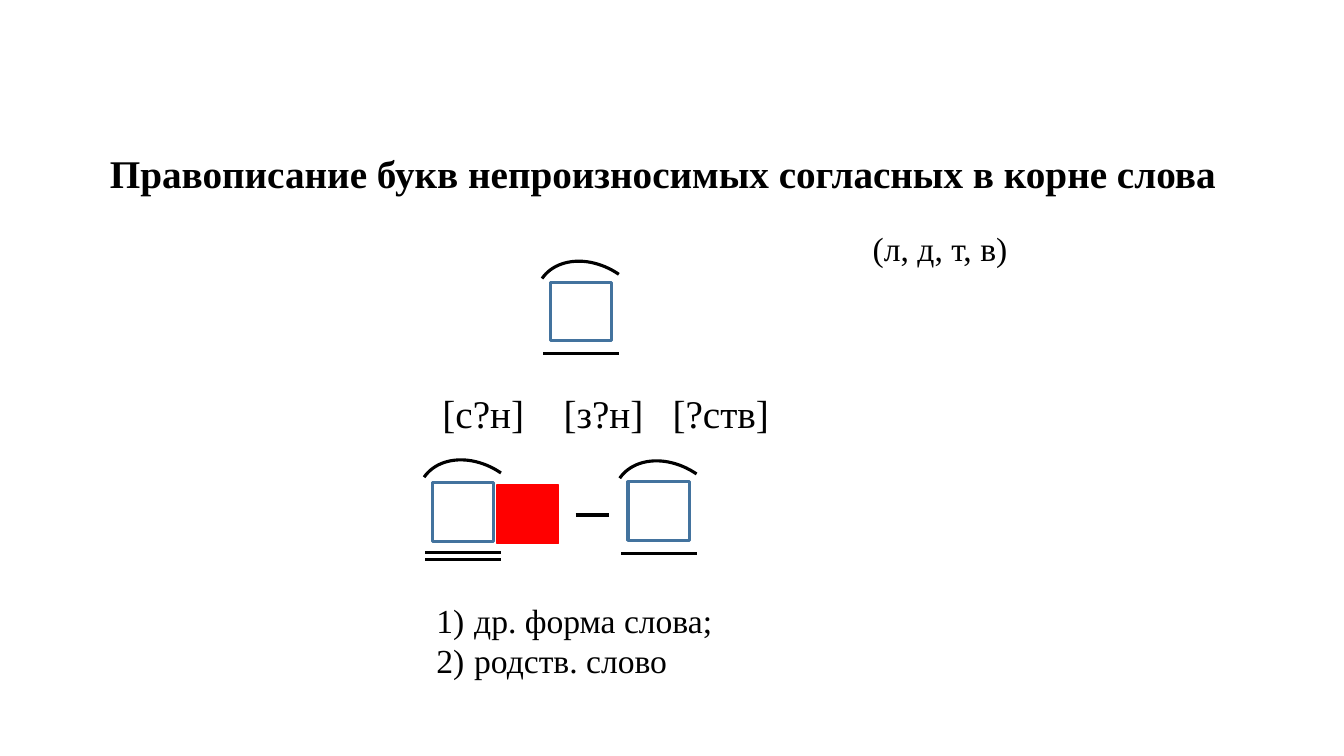
from pptx import Presentation
from pptx.dml.color import RGBColor
from pptx.enum import shapes, text
from pptx.oxml import ns
from pptx.util import Pt
from lxml import etree

BLACK = RGBColor(0, 0, 0)
WHITE = RGBColor(255, 255, 255)
BLUE = RGBColor(0x43, 0x73, 0x9E)
RED = RGBColor(255, 0, 0)
FONT = "Times New Roman"
STROKE = 2.25

TITLE = ("Правописание букв непроизносимых согласных в корне слова", (71.3, 103, 823, 41))
LETTERS = (["(л, д, т, в)"], (616.3, 159.1, 193.7, 36), 24)
SOUNDS = (["[с?н]\t[з?н]\t[?ств]"], (308.9, 274.3, 289.4, 41), 28)
CHECKS = (["др. форма слова;", "родств. слово"], (304.6, 424.8, 229, 65.5), 24)
SOUND_TABS = (86.6, 164.4)
CHECK_INDENT = 27

SQUARE = (43.9, 41.8)
ARC = (67, 87.1)
ARC_TURN = 304.4
UNDERLINE = 54
OVERHANG = 5
ROOTS = [
    (393.1, 201.6, 21.6, (51.1,)),
    (448.6, 344.2, 21.6, (51.1,)),
    (308.9, 344.9, 23, (49.7, 54.7)),
]
ENDING = (355, 346.3)
DASH = (411.1, 367.9, 23.8)


def add_figure(kind, frame, fill, line, width):
    figure = page.shapes.add_shape(kind, *map(Pt, frame))
    figure.shadow.inherit = False
    if fill is None:
        figure.fill.background()
    else:
        figure.fill.solid()
        figure.fill.fore_color.rgb = fill
    figure.line.color.rgb = line
    figure.line.width = Pt(width)
    return figure


def add_line(left, top, length):
    line = page.shapes.add_connector(
        shapes.MSO_CONNECTOR.STRAIGHT, Pt(left), Pt(top), Pt(left + length), Pt(top))
    line.line.color.rgb = BLACK
    line.line.width = Pt(STROKE)
    etree.SubElement(line._element.spPr, ns.qn("a:effectLst"))


def add_root(left, top, rise, underlines):
    add_figure(shapes.MSO_SHAPE.RECTANGLE, (left, top, *SQUARE), WHITE, BLUE, STROKE)
    for drop in underlines:
        add_line(left - OVERHANG, top + drop, UNDERLINE)
    arc = add_figure(shapes.MSO_SHAPE.ARC, (left - 3.5, top - rise, *ARC), None, BLACK, STROKE)
    arc.rotation = ARC_TURN


def style_font(para, size, bold=False):
    para.font.name = FONT
    para.font.size = Pt(size)
    para.font.bold = bold
    para.font.color.rgb = BLACK


def add_text(lines, frame, size, tabs=(), indent=0):
    box = page.shapes.add_textbox(*map(Pt, frame))
    box.text_frame.word_wrap = True
    box.text_frame.auto_size = text.MSO_AUTO_SIZE.SHAPE_TO_FIT_TEXT
    box.text_frame.text = "\n".join(lines)
    for para in box.text_frame.paragraphs:
        properties = para._p.get_or_add_pPr()
        if indent:
            properties.set("marL", str(Pt(indent)))
            properties.set("indent", str(Pt(-indent)))
            etree.SubElement(properties, ns.qn("a:buAutoNum"), type="arabicParenR")
        if tabs:
            stops = etree.SubElement(properties, ns.qn("a:tabLst"))
            for stop in tabs:
                etree.SubElement(stops, ns.qn("a:tab"), pos=str(Pt(stop)), algn="l")
        style_font(para, size)


deck = Presentation()
deck.slide_width, deck.slide_height = Pt(960), Pt(540)
page = deck.slides.add_slide(deck.slide_layouts[5])

title = page.shapes.title
wording, frame = TITLE
title.left, title.top, title.width, title.height = map(Pt, frame)
title.text_frame.text = wording
title.text_frame.word_wrap = True
title.text_frame.auto_size = text.MSO_AUTO_SIZE.SHAPE_TO_FIT_TEXT
title.text_frame.vertical_anchor = text.MSO_ANCHOR.TOP
heading = title.text_frame.paragraphs[0]
heading.alignment = text.PP_ALIGN.LEFT
style_font(heading, 28, bold=True)

add_text(*LETTERS)
for root in ROOTS:
    add_root(*root)
add_figure(shapes.MSO_SHAPE.RECTANGLE, (*ENDING, *SQUARE), RED, RED, 1)
add_line(*DASH)
add_text(*CHECKS, indent=CHECK_INDENT)
add_text(*SOUNDS, tabs=SOUND_TABS)

deck.save("out.pptx")
